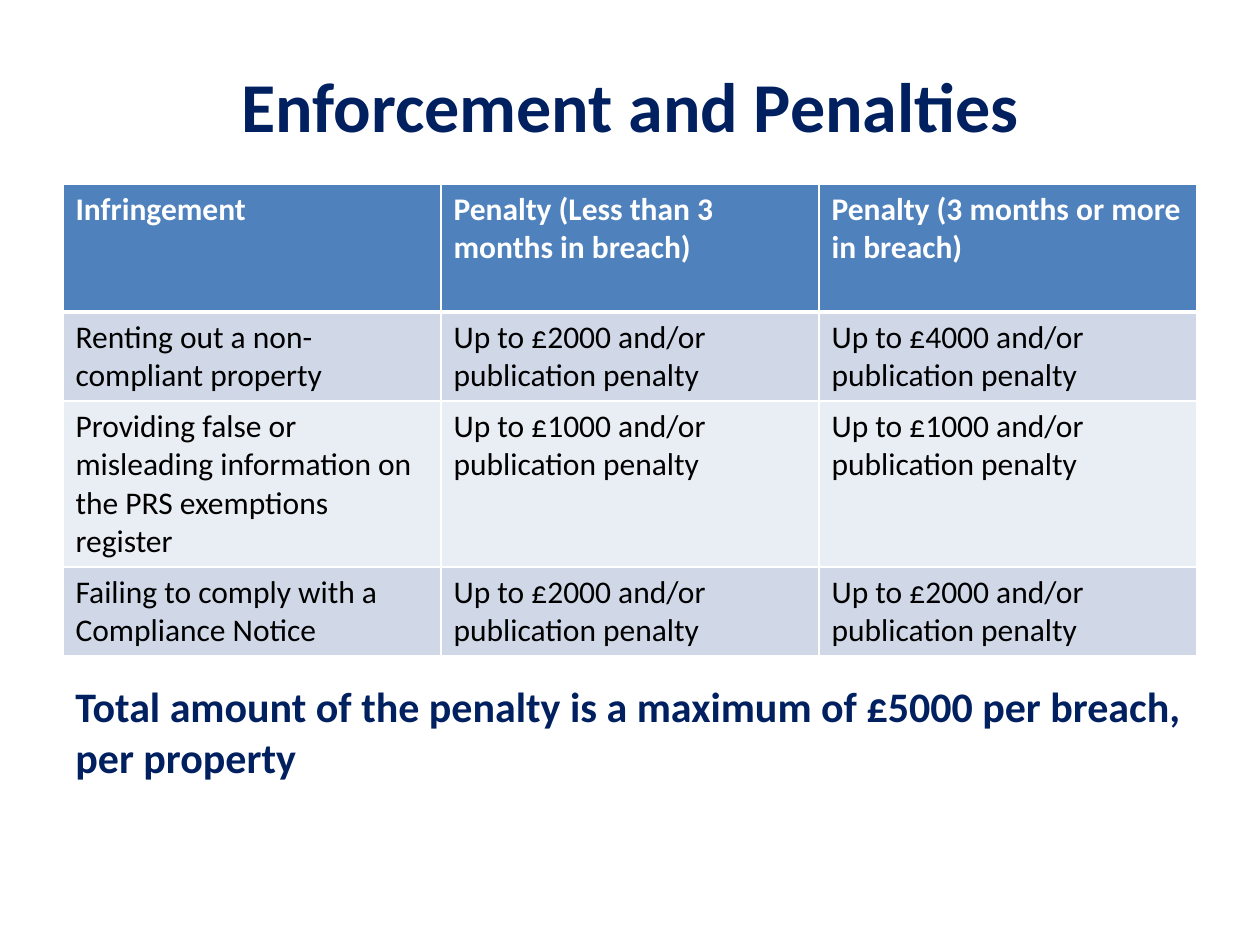
from lxml import etree
from pptx import Presentation
from pptx import util as u
from pptx.dml.color import RGBColor
from pptx.enum import text
from pptx.oxml import ns

PX = u.Inches(1) / 126
NAVY, WHITE, BLACK = "002060", "FFFFFF", "000000"


def px(*vals):
    return [u.Emu(round(v * PX)) for v in vals]


def style(par, size, color, bold):
    fmt = {"name": "Calibri", "size": u.Pt(size), "bold": bold}
    for key, val in fmt.items():
        setattr(par.font, key, val)
    par.font.color.rgb = RGBColor.from_string(color)


deck = Presentation()
deck.slide_width, deck.slide_height = px(1260, 945)
slide = deck.slides.add_slide(deck.slide_layouts[6])

# Title and closing note
notes = [
    ("Enforcement and Penalties", 26, 40, text.PP_ALIGN.CENTER),
    ("Total amount of the penalty is a maximum of £5000 per breach, per property",
     652, 24, text.PP_ALIGN.LEFT),
]
for words, top, size, align in notes:
    frame = slide.shapes.add_textbox(*px(63, top, 1134, 158)).text_frame
    frame.word_wrap = True
    frame.vertical_anchor = text.MSO_ANCHOR.MIDDLE
    par = frame.paragraphs[0]
    par.text, par.alignment = words, align
    style(par, size, NAVY, True)

# Penalty table
fine = "Up to £{} and/or publication penalty"
rows = [
    ("Infringement", "Penalty (Less than 3 months in breach)",
     "Penalty (3 months or more in breach)"),
    ("Renting out a non-compliant property", fine.format(2000), fine.format(4000)),
    ("Providing false or misleading information on the PRS exemptions register",
     fine.format(1000), fine.format(1000)),
    ("Failing to comply with a Compliance Notice", fine.format(2000), fine.format(2000)),
]
highs = [128, 89, 166, 89]
fills = ["4F81BD", "D0D8E8", "E9EDF4", "D0D8E8"]
table = slide.shapes.add_table(4, 3, *px(63, 184, 1134, sum(highs))).table
for col in table.columns:
    col.width = px(378)[0]

for r, (row, high, fill) in enumerate(zip(rows, highs, fills)):
    table.rows[r].height = px(high)[0]
    head = r == 0
    for c, words in enumerate(row):
        cell = table.cell(r, c)
        props = cell._tc.get_or_add_tcPr()
        for side in "LRTB":
            thick = (r, side) in [(0, "B"), (1, "T")]
            line = etree.SubElement(props, ns.qn(f"a:ln{side}"),
                                    w=str(u.Pt(3 if thick else 1)))
            solid = etree.SubElement(line, ns.qn("a:solidFill"))
            etree.SubElement(solid, ns.qn("a:srgbClr"), val=WHITE)
        cell.fill.solid()
        cell.fill.fore_color.rgb = RGBColor.from_string(fill)
        cell.text = words
        style(cell.text_frame.paragraphs[0], 18, WHITE if head else BLACK, head)

deck.save("out.pptx")
